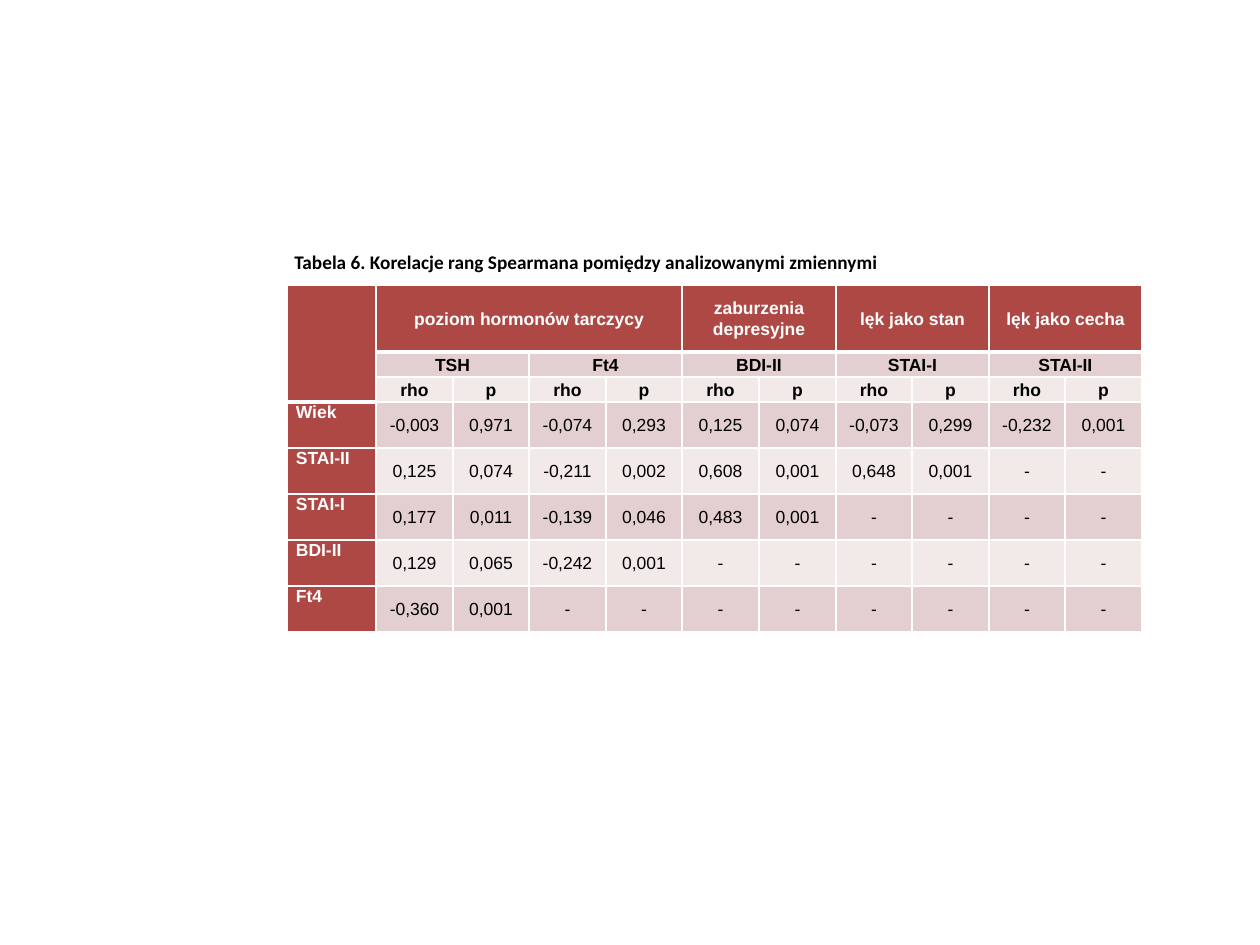
from dataclasses import dataclass
from typing import Any

from lxml import etree
from pptx import Presentation
from pptx.dml.color import RGBColor
from pptx.enum.text import MSO_ANCHOR, PP_ALIGN
from pptx.oxml.ns import qn
from pptx.util import Pt

TOP, MIDDLE = MSO_ANCHOR.TOP, MSO_ANCHOR.MIDDLE
LEFT, CENTER = PP_ALIGN.LEFT, PP_ALIGN.CENTER
SCALE = 914400 // 126
RED, ROSE, PALE = "AE4845", "E3CFCF", "F2E9E9"
WHITE, BLACK = "FFFFFF", "000000"
WIDTHS = [89] + [77, 76, 77, 76, 77] * 2
HEIGHTS = [67, 25, 25] + [46] * 5
GROUPS = [
    ("poziom hormonów tarczycy", 4),
    ("zaburzenia depresyjne", 2),
    ("lęk jako stan", 2),
    ("lęk jako cecha", 2),
]
TESTS = ["TSH", "Ft4", "BDI-II", "STAI-I", "STAI-II"]
RESULTS = [
    ("Wiek", "-0,003 0,971 -0,074 0,293 0,125 0,074 -0,073 0,299 -0,232 0,001"),
    ("STAI-II", "0,125 0,074 -0,211 0,002 0,608 0,001 0,648 0,001 - -"),
    ("STAI-I", "0,177 0,011 -0,139 0,046 0,483 0,001 - - - -"),
    ("BDI-II", "0,129 0,065 -0,242 0,001 - - - - - -"),
    ("Ft4", "-0,360 0,001 - - - - - - - -"),
]


@dataclass(frozen=True)
class Look:
    fill: str
    ink: str = BLACK
    bold: bool = False
    align: Any = CENTER
    anchor: Any = MIDDLE


@dataclass(frozen=True)
class Item:
    row: int
    col: int
    text: str
    look: Look
    rows: int = 1
    cols: int = 1


HEAD = Look(RED, WHITE, True)
SIDE = Look(RED, WHITE, True, LEFT, TOP)


def px(size: int) -> int:
    return size * SCALE


def color(code: str) -> RGBColor:
    return RGBColor.from_string(code)


def apply(target: Any, values: dict[str, Any]) -> None:
    for name, value in values.items():
        setattr(target, name, value)


def write(par: Any, text: str, face: str, size: int, ink: str, bold: bool) -> None:
    run = par.add_run()
    run.text = text
    apply(run.font, {"name": face, "size": Pt(size), "bold": bold})
    run.font.color.rgb = color(ink)


def edge(cell: Any, row: int, col: int) -> None:
    ends = {2 if col == 0 else 0}
    props = cell._tc.get_or_add_tcPr()
    widths = {
        "L": 1,
        "R": 1,
        "T": 3 if row - 1 in ends else 1,
        "B": 3 if row in ends else 1,
    }
    for side, width in widths.items():
        line = etree.SubElement(props, qn(f"a:ln{side}"), w=str(Pt(width)))
        fill = etree.SubElement(line, qn("a:solidFill"))
        etree.SubElement(fill, qn("a:srgbClr"), val=WHITE)


def draw(table: Any, item: Item) -> None:
    look = item.look
    for row in range(item.row, item.row + item.rows):
        for col in range(item.col, item.col + item.cols):
            cell = table.cell(row, col)
            edge(cell, row, col)
            cell.fill.solid()
            cell.fill.fore_color.rgb = color(look.fill)
            apply(cell, {
                "margin_left": px(9), "margin_right": px(9),
                "margin_top": 0, "margin_bottom": 0,
                "vertical_anchor": look.anchor,
            })
            par = cell.text_frame.paragraphs[0]
            apply(par, {"alignment": look.align, "line_spacing": 1.07})
            if item.text and (row, col) == (item.row, item.col):
                write(par, item.text, "Arial", 10, look.ink, look.bold)
            else:
                etree.SubElement(par._p, qn("a:endParaRPr"), sz="1000")
    if item.rows * item.cols > 1:
        last = table.cell(item.row + item.rows - 1, item.col + item.cols - 1)
        table.cell(item.row, item.col).merge(last)


def plan() -> list[Item]:
    items = [Item(0, 0, "", HEAD, rows=3)]
    col = 1
    for text, span in GROUPS:
        items.append(Item(0, col, text, HEAD, cols=span))
        col += span
    for num, test in enumerate(TESTS):
        col = 1 + 2 * num
        items.append(Item(1, col, test, Look(ROSE, bold=True), cols=2))
        for step, text in enumerate(("rho", "p")):
            items.append(Item(2, col + step, text, Look(PALE, bold=True)))
    for row, (name, values) in enumerate(RESULTS, 3):
        items.append(Item(row, 0, name, SIDE))
        look = Look(ROSE if row % 2 else PALE)
        for col, text in enumerate(values.split(), 1):
            items.append(Item(row, col, text, look))
    return items


def main() -> None:
    deck = Presentation()
    apply(deck, {"slide_width": px(1260), "slide_height": px(945)})
    slide = deck.slides.add_slide(deck.slide_layouts[6])

    frame = slide.shapes.add_table(
        len(HEIGHTS), len(WIDTHS), px(287), px(285),
        px(sum(WIDTHS)), px(sum(HEIGHTS)),
    )
    table = frame.table
    apply(table, {"first_row": False, "horz_banding": False})
    for col, width in zip(table.columns, WIDTHS):
        col.width = px(width)
    for row, height in zip(table.rows, HEIGHTS):
        row.height = px(height)
    for item in plan():
        draw(table, item)

    title = slide.shapes.add_textbox(px(282), px(244), px(873), px(37)).text_frame
    title.word_wrap = True
    write(
        title.paragraphs[0],
        "Tabela 6. Korelacje rang Spearmana pomiędzy analizowanymi zmiennymi",
        "Calibri", 11, BLACK, True,
    )
    deck.save("out.pptx")


if __name__ == "__main__":
    main()
